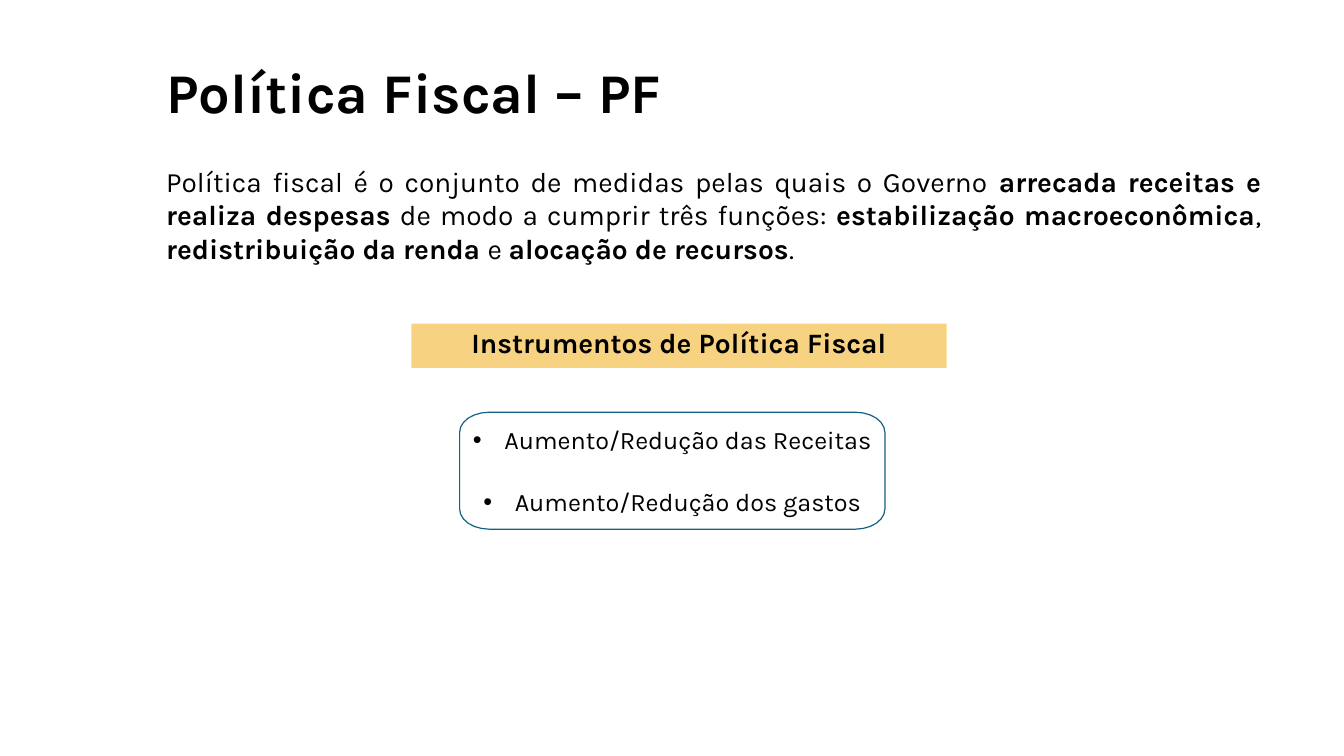
from dataclasses import dataclass
from math import cos, radians, sin

from lxml.etree import SubElement
from pptx import Presentation
from pptx.dml.color import RGBColor as Rgb
from pptx.enum.shapes import MSO_SHAPE as Kind
from pptx.enum.text import MSO_ANCHOR as Anchor, MSO_AUTO_SIZE as Fit, PP_ALIGN as Align
from pptx.oxml.ns import qn
from pptx.shapes.autoshape import Shape
from pptx.slide import Slide
from pptx.util import Pt


@dataclass(frozen=True)
class Theme:
    font: str = "Karla"
    ink: Rgb = Rgb(0x00, 0x00, 0x00)
    gold: Rgb = Rgb(0xF7, 0xD2, 0x81)
    blue: Rgb = Rgb(0x15, 0x60, 0x82)
    title: float = 40
    body: float = 20
    item: float = 18


@dataclass(frozen=True)
class Span:
    text: str
    bold: bool = False


@dataclass(frozen=True)
class Box:
    left: float
    top: float
    width: float
    height: float


@dataclass(frozen=True)
class Para:
    spans: tuple[Span, ...]
    size: float
    align: Align = Align.LEFT
    before: float = 0
    line: float = 0
    indent: float = 0


THEME = Theme()
WIDE, HIGH = 960, 540

# Places
HEAD = Box(111.6, 37.4, 746, 55.4)
INTRO = Box(111.6, 113.8, 796.3, 80)
BANNER = Box(293.8, 231.1, 382.3, 31.7)
FRAME = Box(328.3, 294.5, 303.8, 83.5)
ROUND_X, ROUND_Y = 21, 14.4

# Words
TITLE = Para((Span("Política Fiscal – PF", True),), THEME.title)
TEXT = Para((
    Span("Política fiscal é o conjunto de medidas pelas quais o Governo "),
    Span("arrecada receitas e realiza despesas", True),
    Span(" de modo a cumprir três funções: "),
    Span("estabilização macroeconômica", True),
    Span(", "),
    Span("redistribuição da renda ", True),
    Span("e "),
    Span("alocação de recursos", True),
    Span("."),
), THEME.body, Align.JUSTIFY)
LABEL = Para((Span("Instrumentos de Política Fiscal", True),),
             THEME.body, Align.CENTER, line=19)
ITEMS = [
    Para((Span(f"Aumento/Redução {end}"),), THEME.item, Align.CENTER,
         before=22.5 * spot, indent=22.5)
    for spot, end in enumerate(("das Receitas", "dos gastos"))
]


def place(box: Box) -> tuple[Pt, Pt, Pt, Pt]:
    return Pt(box.left), Pt(box.top), Pt(box.width), Pt(box.height)


def write(shape: Shape, paras: list[Para], anchor: Anchor = Anchor.TOP,
          pad_x: float = 7.2, pad_y: float = 3.6) -> None:
    frame = shape.text_frame
    frame.word_wrap = True
    frame.auto_size = Fit.NONE
    frame.vertical_anchor = anchor
    frame.margin_left = frame.margin_right = Pt(pad_x)
    frame.margin_top = frame.margin_bottom = Pt(pad_y)
    for spot, para in enumerate(paras):
        line = frame.add_paragraph() if spot else frame.paragraphs[0]
        line.alignment = para.align
        line.space_before = Pt(para.before)
        if para.line:
            line.line_spacing = Pt(para.line)
        if para.indent:
            props = line._p.get_or_add_pPr()
            props.set("marL", str(Pt(para.indent)))
            props.set("indent", str(-Pt(para.indent)))
            SubElement(props, qn("a:buFont")).set("typeface", "Arial")
            SubElement(props, qn("a:buChar")).set("char", "•")
        for span in para.spans:
            run = line.add_run()
            run.text = span.text
            run.font.name = THEME.font
            run.font.size = Pt(para.size)
            run.font.bold = span.bold
            run.font.color.rgb = THEME.ink


def curve(box: Box) -> list[tuple[Pt, Pt]]:
    """Outline with elliptical corners, clockwise from the left edge."""
    right, base = box.left + box.width, box.top + box.height
    hubs = (
        (box.left + ROUND_X, box.top + ROUND_Y, 180),
        (right - ROUND_X, box.top + ROUND_Y, 270),
        (right - ROUND_X, base - ROUND_Y, 0),
        (box.left + ROUND_X, base - ROUND_Y, 90),
    )
    return [
        (Pt(x + ROUND_X * cos(radians(start + turn))),
         Pt(y + ROUND_Y * sin(radians(start + turn))))
        for x, y, start in hubs for turn in range(0, 91, 15)
    ]


def banner(slide: Slide) -> None:
    shape = slide.shapes.add_shape(Kind.RECTANGLE, *place(BANNER))
    shape.shadow.inherit = False
    shape.fill.solid()
    shape.fill.fore_color.rgb = THEME.gold
    shape.line.fill.background()
    write(shape, [LABEL], Anchor.MIDDLE, 0, 5.8)


def tools(slide: Slide) -> None:
    first, *rest = curve(FRAME)
    pen = slide.shapes.build_freeform(*first)
    pen.add_line_segments(rest, close=True)
    shape = pen.convert_to_shape()
    shape.shadow.inherit = False
    shape.fill.background()
    shape.line.color.rgb = THEME.blue
    shape.line.width = Pt(0.84)
    write(shape, ITEMS, Anchor.MIDDLE, 0, 0)


def main() -> None:
    deck = Presentation()
    deck.slide_width, deck.slide_height = Pt(WIDE), Pt(HIGH)
    slide = deck.slides.add_slide(deck.slide_layouts.get_by_name("Title Only"))

    # Title and definition
    head = slide.shapes.title
    head.left, head.top, head.width, head.height = place(HEAD)
    write(head, [TITLE])
    write(slide.shapes.add_textbox(*place(INTRO)), [TEXT])

    # Instruments
    banner(slide)
    tools(slide)
    deck.save("out.pptx")


if __name__ == "__main__":
    main()
